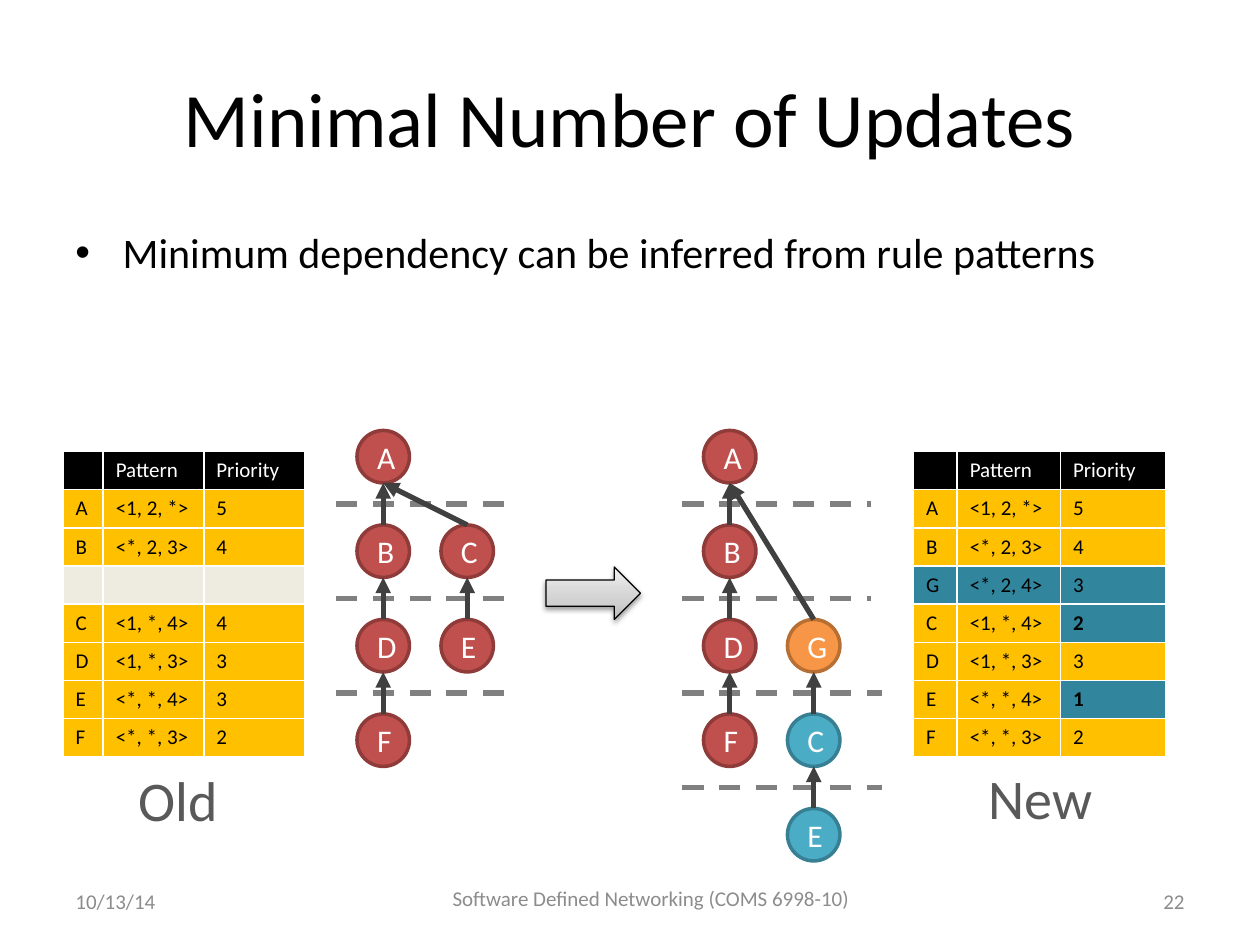
from lxml.etree import SubElement
from pptx import Presentation
from pptx.dml.color import RGBColor
from pptx.enum.dml import MSO_LINE
from pptx.enum.shapes import MSO_CONNECTOR, MSO_SHAPE
from pptx.enum.text import MSO_ANCHOR, MSO_AUTO_SIZE, PP_ALIGN
from pptx.oxml import parse_xml
from pptx.oxml.ns import nsdecls, qn
from pptx.util import Pt

COLORS = {
    "black": "000000", "white": "FFFFFF", "label": "595959", "footer": "8C8C8C",
    "level": "808080", "edge": "404040", "kept": "FFC000", "changed": "31859C", "gap": "EEECE1",
}
NODE_COLORS = {  # fill, outline
    "old": ("C0504D", "8E3B39"), "added": ("F79646", "B76F34"), "moved": ("4BACC6", "377F92"),
}
FONT = "Calibri"
NODE_SIZE, LEVEL_STEP, COLUMN_STEP, GRAPH_TOP = 30, 54, 48, 246
TABLE_TOP, ROW_HEIGHT = 258, 21.8

HEADER = ("", "Pattern", "Priority")
OLD_RULES = [
    ("A", "<1, 2, *>", "5"), ("B", "<*, 2, 3>", "4"), ("", "", ""), ("C", "<1, *, 4>", "4"),
    ("D", "<1, *, 3>", "3"), ("E", "<*, *, 4>", "3"), ("F", "<*, *, 3>", "2"),
]
NEW_RULES = [
    ("A", "<1, 2, *>", "5"), ("B", "<*, 2, 3>", "4"), ("G", "<*, 2, 4>", "3"), ("C", "<1, *, 4>", "2"),
    ("D", "<1, *, 3>", "3"), ("E", "<*, *, 4>", "1"), ("F", "<*, *, 3>", "2"),
]
NEW_PRIORITIES = {(4, 2), (6, 2)}
CHANGED_CELLS = {(3, 0), (3, 1), (3, 2)} | NEW_PRIORITIES

# name: (column, level, state)
OLD_NODES = {
    "A": (0, 0, "old"), "B": (0, 1, "old"), "C": (1, 1, "old"),
    "D": (0, 2, "old"), "E": (1, 2, "old"), "F": (0, 3, "old"),
}
NEW_NODES = {
    "A": (0, 0, "old"), "B": (0, 1, "old"), "G": (1, 2, "added"), "D": (0, 2, "old"),
    "C": (1, 3, "moved"), "F": (0, 3, "old"), "E": (1, 4, "moved"),
}


def rgb(value):
    return RGBColor.from_string(value)


def write(frame, text, size=12, color="black", align=PP_ALIGN.LEFT, bold=False):
    paragraph = frame.paragraphs[0]
    paragraph.alignment = align
    if not text:
        SubElement(paragraph._p, qn("a:endParaRPr"), sz=str(size * 100))
        return paragraph
    run = paragraph.add_run()
    run.text = text
    run.font.name, run.font.size, run.font.bold = FONT, Pt(size), bold
    run.font.color.rgb = rgb(COLORS[color])
    return paragraph


def add_text(slide, box, text, anchor=MSO_ANCHOR.TOP, wrap=True, **text_format):
    frame = slide.shapes.add_textbox(*map(Pt, box)).text_frame
    frame.word_wrap = wrap
    frame.vertical_anchor = anchor
    if not wrap:
        frame.auto_size = MSO_AUTO_SIZE.SHAPE_TO_FIT_TEXT
    return write(frame, text, **text_format)


def add_title(slide, text):
    title = slide.shapes.title
    title.left, title.top, title.width, title.height = map(Pt, (36, 21.6, 648, 90))
    title.text_frame.vertical_anchor = MSO_ANCHOR.MIDDLE
    write(title.text_frame, text, size=44, align=PP_ALIGN.CENTER)


def add_bullet(slide, box, text, **text_format):
    properties = add_text(slide, box, text, **text_format)._p.get_or_add_pPr()
    properties.set("marL", str(Pt(27)))
    properties.set("indent", str(-Pt(27)))
    SubElement(SubElement(properties, qn("a:spcBef")), qn("a:spcPct"), val="20000")
    SubElement(properties, qn("a:buFont"), typeface="Arial")
    SubElement(properties, qn("a:buChar"), char="•")


def add_line(slide, start, end, color):
    line = slide.shapes.add_connector(MSO_CONNECTOR.STRAIGHT, *map(Pt, start + end))
    line.line.color.rgb = rgb(COLORS[color])
    line.line.width = Pt(3)
    SubElement(line._element.spPr, qn("a:effectLst"))
    return line


def add_level(slide, left, right, level):
    y = GRAPH_TOP + 42 + level * LEVEL_STEP
    add_line(slide, (left, y), (right, y), "level").line.dash_style = MSO_LINE.DASH


def add_node(slide, name, x, y, state):
    node = slide.shapes.add_shape(MSO_SHAPE.OVAL, Pt(x), Pt(y), Pt(NODE_SIZE), Pt(NODE_SIZE))
    node.shadow.inherit = False
    fill, outline = NODE_COLORS[state]
    node.fill.solid()
    node.fill.fore_color.rgb = rgb(fill)
    node.line.color.rgb = rgb(outline)
    node.line.width = Pt(2)
    node.text_frame.vertical_anchor = MSO_ANCHOR.MIDDLE
    write(node.text_frame, name, size=18, color="white", align=PP_ALIGN.CENTER)
    return node


def add_graph(slide, left, nodes, edges, level_ends):
    """Draw rule nodes over dashed levels; an edge "BA" points from B up to A."""
    places = {name: (left + column * COLUMN_STEP, GRAPH_TOP + level * LEVEL_STEP)
              for name, (column, level, _) in nodes.items()}
    circles = {name: add_node(slide, name, *places[name], state)
               for name, (_, _, state) in nodes.items()}
    for level, right in enumerate(level_ends):
        add_level(slide, left - 12, right, level)
    for child, parent in edges:
        (child_x, child_y), (parent_x, parent_y) = places[child], places[parent]
        edge = add_line(slide, (child_x + NODE_SIZE / 2, child_y),
                        (parent_x + NODE_SIZE / 2, parent_y + NODE_SIZE), "edge")
        edge.begin_connect(circles[child], 0)
        SubElement(edge.line._get_or_add_ln(), qn("a:tailEnd"), type="triangle")


def add_rules(slide, left, widths, rules, changed=(), bold=()):
    rows = [HEADER] + rules
    table = slide.shapes.add_table(len(rows), len(HEADER), Pt(left), Pt(TABLE_TOP),
                                   Pt(sum(widths)), Pt(ROW_HEIGHT * len(rows))).table
    table.horz_banding = False
    for column, width in zip(table.columns, widths):
        column.width = Pt(width)
    for r, values in enumerate(rows):
        table.rows[r].height = Pt(ROW_HEIGHT)
        for c, value in enumerate(values):
            if r == 0:
                fill = "black"
            elif not value:
                fill = "gap"
            else:
                fill = "changed" if (r, c) in changed else "kept"
            cell = table.cell(r, c)
            cell.fill.solid()
            cell.fill.fore_color.rgb = rgb(COLORS[fill])
            write(cell.text_frame, value, color="black" if r else "white", bold=(r, c) in bold)


def add_transition_arrow(slide):
    arrow = slide.shapes.add_shape(MSO_SHAPE.RIGHT_ARROW, Pt(312), Pt(324), Pt(54), Pt(30))
    arrow.line.color.rgb = rgb(COLORS["black"])
    arrow.line.width = Pt(0.75)
    stops = "".join(f'<a:gs pos="{position * 1000}"><a:srgbClr val="{color}"/></a:gs>'
                    for position, color in ((0, "BDBDBD"), (35, "D1D1D1"), (100, "EEEEEE")))
    properties = arrow._element.spPr
    properties.find(qn("a:prstGeom")).addnext(parse_xml(
        f'<a:gradFill {nsdecls("a")} rotWithShape="1"><a:gsLst>{stops}</a:gsLst>'
        '<a:lin ang="16200000" scaled="0"/></a:gradFill>'))
    properties.append(parse_xml(
        f'<a:effectLst {nsdecls("a")}><a:outerShdw blurRad="{Pt(3.1)}" dist="{Pt(1.6)}" '
        f'dir="5400000" rotWithShape="0"><a:srgbClr val="{COLORS["black"]}">'
        '<a:alpha val="38000"/></a:srgbClr></a:outerShdw></a:effectLst>'))


def add_footer(slide):
    for box, text, align in (
        ((516, 500.4, 168, 28.8), "22", PP_ALIGN.RIGHT),
        ((36, 500.4, 168, 28.8), "10/13/14", PP_ALIGN.LEFT),
        ((246, 498, 252, 31), "Software Defined Networking (COMS 6998-10)", PP_ALIGN.CENTER),
    ):
        add_text(slide, box, text, anchor=MSO_ANCHOR.MIDDLE, color="footer", align=align)


def main():
    presentation = Presentation()
    presentation.slide_width, presentation.slide_height = Pt(720), Pt(540)
    slide = presentation.slides.add_slide(presentation.slide_layouts[5])
    add_title(slide, "Minimal Number of Updates")
    add_bullet(slide, (36, 126, 648, 356.4),
               "Minimum dependency can be inferred from rule patterns", size=24)
    add_transition_arrow(slide)
    add_rules(slide, 36, (23, 57.5, 57.5), OLD_RULES)
    add_graph(slide, 204, OLD_NODES, ("BA", "CA", "DB", "FD", "EC"), (288, 288, 288))
    add_graph(slide, 402, NEW_NODES, ("BA", "DB", "CG", "FD", "EC", "GA"), (498, 498, 504, 504))
    add_rules(slide, 522, (25, 59, 60), NEW_RULES, CHANGED_CELLS, NEW_PRIORITIES)
    add_text(slide, (72, 434, 62.6, 46), "Old", wrap=False, size=32, color="label")
    add_text(slide, (558, 433, 76.3, 46), "New", wrap=False, size=32, color="label")
    add_footer(slide)
    presentation.save("out.pptx")


if __name__ == "__main__":
    main()
